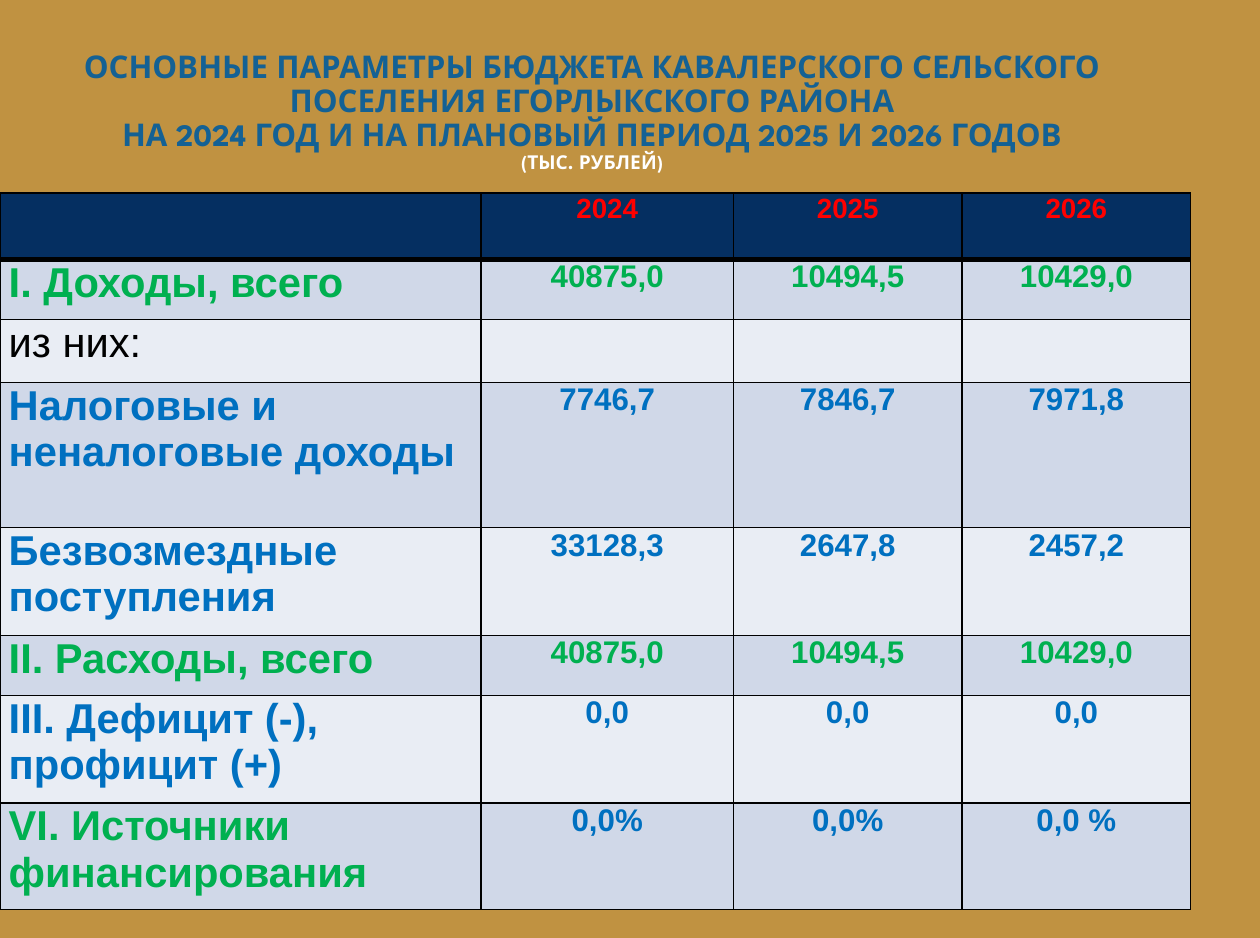
from lxml.etree import SubElement
from pptx import Presentation
from pptx.dml.color import RGBColor
from pptx.enum.text import MSO_ANCHOR, PP_ALIGN
from pptx.oxml.ns import qn
from pptx.util import Inches, Pt

WIDTH, HEIGHT = Inches(10.08), Inches(7.5)
GREEN, BLUE, BLACK, RED = "00B050", "0070C0", "000000", "FF0000"
NAVY, BANDS = "052F61", ("E9EDF4", "D0D8E8")
COL_WEIGHTS = (3.85, 2.02, 1.83, 1.83)
ROWS = (
    (0.53, RED, RED, ("", "2024", "2025", "2026")),
    (0.48, GREEN, GREEN, ("I. Доходы, всего", "40875,0", "10494,5", "10429,0")),
    (0.50, BLACK, BLACK, ("из них:", "", "", "")),
    (1.16, BLUE, BLUE, ("Налоговые и неналоговые доходы", "7746,7", "7846,7", "7971,8")),
    (0.86, BLUE, BLUE, ("Безвозмездные поступления", "33128,3", "2647,8", "2457,2")),
    (0.48, GREEN, GREEN, ("II. Расходы, всего", "40875,0", "10494,5", "10429,0")),
    (0.86, BLUE, BLUE, ("III. Дефицит (-), профицит (+)", "0,0", "0,0", "0,0")),
    (0.85, GREEN, BLUE, ("VI. Источники финансирования", "0,0%", "0,0%", "0,0 %")),
)


def rgb(value):
    """Turn a hex string into a colour."""
    return RGBColor.from_string(value)


def share_box(left, top, width, height):
    """Turn shares of the slide into a box of lengths."""
    return (int(left * WIDTH), int(top * HEIGHT),
            int(width * WIDTH), int(height * HEIGHT))


def add_run(p, text, font, size, color, bold=True):
    """Add one formatted run to a paragraph."""
    r = p.add_run()
    r.text = text
    r.font.name, r.font.size, r.font.bold = font, Pt(size), bold
    r.font.color.rgb = rgb(color)


def set_borders(cell, top, bottom):
    """Draw black borders with the given top and bottom widths."""
    tc_pr = cell._tc.get_or_add_tcPr()
    for side, points in (("L", 1), ("R", 1), ("T", top), ("B", bottom)):
        ln = SubElement(tc_pr, qn(f"a:ln{side}"), w=str(Pt(points)))
        fill = SubElement(ln, qn("a:solidFill"))
        SubElement(fill, qn("a:srgbClr"), val=BLACK)


def add_title(s, box):
    """Fill the title with the heading and its unit line."""
    sp = s.shapes.title
    sp.left, sp.top, sp.width, sp.height = box
    tf = sp.text_frame
    tf.word_wrap = True
    tf.vertical_anchor = MSO_ANCHOR.MIDDLE
    p = tf.paragraphs[0]
    p.alignment = PP_ALIGN.CENTER
    p.line_spacing = 0.9
    for line in (
        "ОСНОВНЫЕ ПАРАМЕТРЫ БЮДЖЕТА КАВАЛЕРСКОГО СЕЛЬСКОГО ПОСЕЛЕНИЯ ЕГОРЛЫКСКОГО РАЙОНА",
        "НА 2024 ГОД И НА ПЛАНОВЫЙ ПЕРИОД 2025 И 2026 ГОДОВ",
    ):
        add_run(p, line, "League Spartan", 18, "146194")
        p.add_line_break()
    add_run(p, "(ТЫС. РУБЛЕЙ)", "League Spartan", 11, "FFFFFF")


def fill_cell(cell, row, col, text, color):
    """Write and format one budget cell."""
    if text:
        cell.margin_left = cell.margin_right = Inches(0.07)
        cell.margin_top = cell.margin_bottom = 0
        p = cell.text_frame.paragraphs[0]
        p.alignment = PP_ALIGN.CENTER if col else PP_ALIGN.LEFT
        size = 16 if row == 0 else 18 if col else 24
        add_run(p, text, "Arial", size, color, color != BLACK)
    set_borders(cell, 3 if row == 1 else 1, 3 if row == 0 else 1)
    cell.fill.solid()
    cell.fill.fore_color.rgb = rgb(BANDS[row % 2] if row else NAVY)


def add_budget_table(s, box):
    """Place the budget table, sharing the box out by weights."""
    width, height = box[2:]
    table = s.shapes.add_table(len(ROWS), len(COL_WEIGHTS), *box).table
    for column, weight in zip(table.columns, COL_WEIGHTS):
        column.width = int(width * weight / sum(COL_WEIGHTS))
    total = sum(row[0] for row in ROWS)
    for i, (weight, label_color, value_color, texts) in enumerate(ROWS):
        table.rows[i].height = int(height * weight / total)
        for j, text in enumerate(texts):
            color = value_color if j else label_color
            fill_cell(table.cell(i, j), i, j, text, color)


def main():
    """Build the budget slide."""
    prs = Presentation()
    prs.slide_width, prs.slide_height = WIDTH, HEIGHT
    s = prs.slides.add_slide(prs.slide_layouts[5])
    s.background.fill.solid()
    s.background.fill.fore_color.rgb = rgb("C09241")
    add_title(s, share_box(0, 0.04, 0.94, 0.16))
    add_budget_table(s, share_box(0, 0.206, 0.945, 0.764))
    prs.save("out.pptx")


if __name__ == "__main__":
    main()
